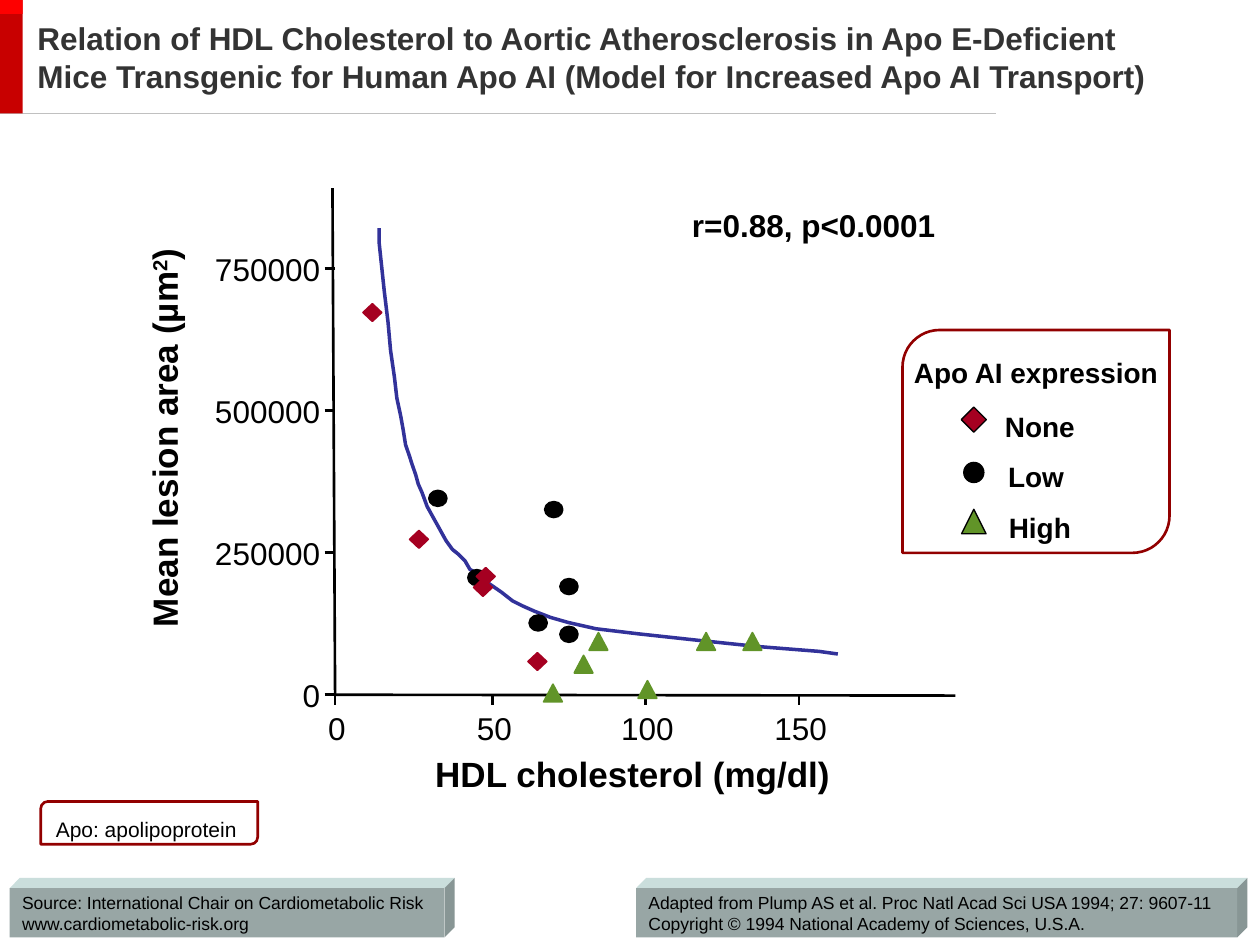
from lxml import etree
from pptx import Presentation
from pptx.dml.color import RGBColor
from pptx.enum.shapes import MSO_CONNECTOR, MSO_SHAPE
from pptx.enum.text import MSO_ANCHOR, PP_ALIGN
from pptx.oxml.ns import qn
from pptx.util import Pt

LEFT, CENTER, RIGHT = PP_ALIGN.LEFT, PP_ALIGN.CENTER, PP_ALIGN.RIGHT
MIDDLE = MSO_ANCHOR.MIDDLE
RECTANGLE, OVAL, DIAMOND = MSO_SHAPE.RECTANGLE, MSO_SHAPE.OVAL, MSO_SHAPE.DIAMOND
TRIANGLE = MSO_SHAPE.ISOSCELES_TRIANGLE
ROUNDED_DIAGONAL = MSO_SHAPE.ROUND_2_DIAG_RECTANGLE
STRAIGHT = MSO_CONNECTOR.STRAIGHT

BLACK = RGBColor(0x00, 0x00, 0x00)
WHITE = RGBColor(0xFF, 0xFF, 0xFF)
TITLE_GRAY = RGBColor(0x33, 0x33, 0x33)
RULE_GRAY = RGBColor(0xC0, 0xC0, 0xC0)
DARK_RED = RGBColor(0xC8, 0x00, 0x00)
BRIGHT_RED = RGBColor(0xFE, 0x00, 0x00)
FRAME_RED = RGBColor(0x92, 0x00, 0x00)
CRIMSON = RGBColor(0xA5, 0x00, 0x21)
GREEN = RGBColor(0x61, 0x94, 0x28)
CURVE_BLUE = RGBColor(0x32, 0x32, 0x9A)
BAR_FRONT = RGBColor(0x98, 0xA6, 0xA5)
BAR_TOP = RGBColor(0xCA, 0xDE, 0xDC)
BAR_SIDE = RGBColor(0x88, 0x96, 0x95)

prs = Presentation()
prs.slide_width, prs.slide_height = Pt(720), Pt(540)
slide = prs.slides.add_slide(prs.slide_layouts[5])
shapes = slide.shapes


def write(holder, text, size=18, bold=False, color=BLACK, align=LEFT,
          anchor=None, wrap=False, spacing=None):
    frame = holder.text_frame
    frame.word_wrap = wrap
    if anchor is not None:
        frame.vertical_anchor = anchor
    frame.text = text
    for paragraph in frame.paragraphs:
        paragraph.alignment = align
        paragraph.line_spacing = spacing
        for run in paragraph.runs:
            run.font.name = "Arial"
            run.font.size = Pt(size)
            run.font.bold = bold
            run.font.color.rgb = color
    return frame


def draw(kind, left, top, width, height, fill, line=None, weight=1):
    shape = shapes.add_shape(kind, Pt(left), Pt(top), Pt(width), Pt(height))
    shape.shadow.inherit = False
    shape.fill.solid()
    shape.fill.fore_color.rgb = fill
    if line is None:
        shape.line.fill.background()
    else:
        shape.line.color.rgb = line
        shape.line.width = Pt(weight)
    return shape


title = shapes.title
title.left, title.top, title.width, title.height = Pt(14.2), Pt(0), Pt(661), Pt(65.5)
write(title, "Relation of HDL Cholesterol to Aortic Atherosclerosis in Apo E-Deficient "
      "Mice Transgenic for Human Apo AI (Model for Increased Apo AI Transport)",
      bold=True, color=TITLE_GRAY, anchor=MIDDLE, wrap=True)

X_ZERO = 191.5
Y_ZERO, Y_STEP = 397, 81.2
x_ticks = [(X_ZERO, "0"), (281.5, "50"), (369, "100"), (456.5, "150")]
y_ticks = [(Y_ZERO - i * Y_STEP, str(i * 250000)) for i in range(4)]

segments = [(0, 64.8, 569, 64.8, RULE_GRAY, 0.75),
            (X_ZERO, Y_ZERO, 190, 107.5, BLACK, 1.5),
            (X_ZERO, Y_ZERO, 546, 397.5, BLACK, 1.5)]
segments += [(x, 398, x, 403, BLACK, 1.5) for x, _ in x_ticks]
segments += [(185.5, y, 191.5, y, BLACK, 1.5) for y, _ in y_ticks]
for x1, y1, x2, y2, color, weight in segments:
    segment = shapes.add_connector(STRAIGHT, Pt(x1), Pt(y1), Pt(x2), Pt(y2))
    segment.line.color.rgb = color
    segment.line.width = Pt(weight)
    etree.SubElement(segment._element.spPr, qn("a:effectLst"))

draw(RECTANGLE, 0, 0, 13, 64.8, DARK_RED)
draw(RECTANGLE, 0, 0, 13, 8, BRIGHT_RED)

BAR_Y, BAR_HEIGHT, DEPTH = 507.5, 28.2, 5.8
for left, width, citation in [
    (5.5, 248.5, "Source: International Chair on Cardiometabolic Risk\nwww.cardiometabolic-risk.org"),
    (363.5, 343.5, "Adapted from Plump AS et al. Proc Natl Acad Sci USA 1994; 27: 9607-11 "
                   "Copyright © 1994 National Academy of Sciences, U.S.A."),
]:
    right, bottom, back = left + width, BAR_Y + BAR_HEIGHT, BAR_Y - DEPTH
    top_face = [(left, BAR_Y), (left + DEPTH, back), (right + DEPTH, back), (right, BAR_Y)]
    side_face = [(right, BAR_Y), (right + DEPTH, back),
                 (right + DEPTH, bottom - DEPTH), (right, bottom)]
    for corners, color in [(top_face, BAR_TOP), (side_face, BAR_SIDE)]:
        points = [(Pt(x), Pt(y)) for x, y in corners]
        builder = shapes.build_freeform(*points[0])
        builder.add_line_segments(points[1:])
        face = builder.convert_to_shape()
        face.shadow.inherit = False
        face.fill.solid()
        face.fill.fore_color.rgb = color
        face.line.fill.background()
    bar = draw(RECTANGLE, left, BAR_Y, width, BAR_HEIGHT, BAR_FRONT)
    write(bar, citation, size=10, anchor=MIDDLE, wrap=True)

for x, label in x_ticks:
    write(shapes.add_textbox(Pt(x - 29), Pt(401.7), Pt(60), Pt(29)), label, align=CENTER)
for y, label in y_ticks:
    write(shapes.add_textbox(Pt(100), Pt(y - 14), Pt(90), Pt(29)), label, align=RIGHT)

y_title = shapes.add_textbox(Pt(-28.8), Pt(234.7), Pt(244.8), Pt(31))
y_title.rotation = 270
y_frame = write(y_title, "Mean lesion area (µm", size=20, bold=True, align=CENTER, wrap=True)
for piece, baseline in [("2", "30000"), (")", "0")]:
    run = y_frame.paragraphs[0].add_run()
    run.text = piece
    run.font.name, run.font.size, run.font.bold = "Arial", Pt(20), True
    run.font.color.rgb = BLACK
    run.font._element.set("baseline", baseline)

write(shapes.add_textbox(Pt(236), Pt(426.7), Pt(251), Pt(31)),
      "HDL cholesterol (mg/dl)", size=20, bold=True, align=CENTER)
write(shapes.add_textbox(Pt(385), Pt(114.2), Pt(160), Pt(29)),
      "r=0.88, p<0.0001", bold=True, align=CENTER)

curve_points = [
    (216.7, 130.3), (216.7, 139), (219.6, 166.3), (221.8, 184.3), (223.2, 200.2),
    (225.4, 215.3), (226.8, 227.5), (229, 237.6), (230.4, 245.5), (231.8, 254.2),
    (234, 260.6), (235.4, 265), (237.6, 271.4), (239, 276.5), (241.2, 281.5),
    (244.1, 289.4), (247.7, 295.9), (251.3, 302.4), (254.9, 308.9), (258.5, 313.9),
    (262.1, 316.8), (265.7, 320.4), (268.6, 325.4), (274.3, 328.3), (279.4, 333.4),
    (286.6, 338.4), (293, 343.4), (298.8, 346.3), (305.3, 349.2), (314.6, 352.8),
    (324.7, 355.7), (340.6, 359.3), (365, 362.2), (398.2, 365.8), (432.7, 369.4),
    (468, 372.2), (478.8, 373.7)]
curve_path = [(Pt(x), Pt(y)) for x, y in curve_points]
builder = shapes.build_freeform(*curve_path[0])
builder.add_line_segments(curve_path[1:], close=False)
curve = builder.convert_to_shape()
curve.shadow.inherit = False
curve.fill.background()
curve.line.color.rgb = CURVE_BLUE
curve.line.width = Pt(2)

high = [(370, 394), (316, 396), (333.5, 379.5), (342, 366.5), (403.5, 366.5), (430, 366.5)]
low = [(250.2, 284.8), (272.5, 330.1), (307.5, 356), (316.4, 291.2), (325.1, 335.2),
       (325.1, 362.5)]
none = [(212.8, 178.6), (239.4, 308.2), (276, 335.7), (277.6, 329.4), (307.1, 378)]
for centers, kind, width, height, color, weight in [
    (high, TRIANGLE, 10.6, 10, GREEN, 1),
    (low, OVAL, 9.2, 8, BLACK, 2),
    (none, DIAMOND, 10.6, 10, CRIMSON, 1),
]:
    for x, y in centers:
        draw(kind, x - width / 2, y - height / 2, width, height, color, color, weight)

legend = draw(ROUNDED_DIAGONAL, 515.7, 188.6, 152.6, 127.4, WHITE, FRAME_RED, 1.5)
legend_frame = write(legend, "Apo AI expression\n None\nLow\n High", size=16, bold=True,
                     align=CENTER, anchor=MIDDLE, spacing=1.5)
legend_frame.paragraphs[1].space_before = Pt(2)
for kind, y, size, color in [(DIAMOND, 239.8, 14.4, CRIMSON), (OVAL, 270, 11.5, BLACK),
                             (TRIANGLE, 298, 14, GREEN)]:
    draw(kind, 556.5 - size / 2, y - size / 2, size, size, color, BLACK, 0.75)

abbreviation = draw(ROUNDED_DIAGONAL, 23.3, 458, 124, 24.5, WHITE, FRAME_RED, 1.5)
write(abbreviation, "Apo: apolipoprotein ", size=12, align=CENTER, anchor=MIDDLE, spacing=1.5)

prs.save("out.pptx")
